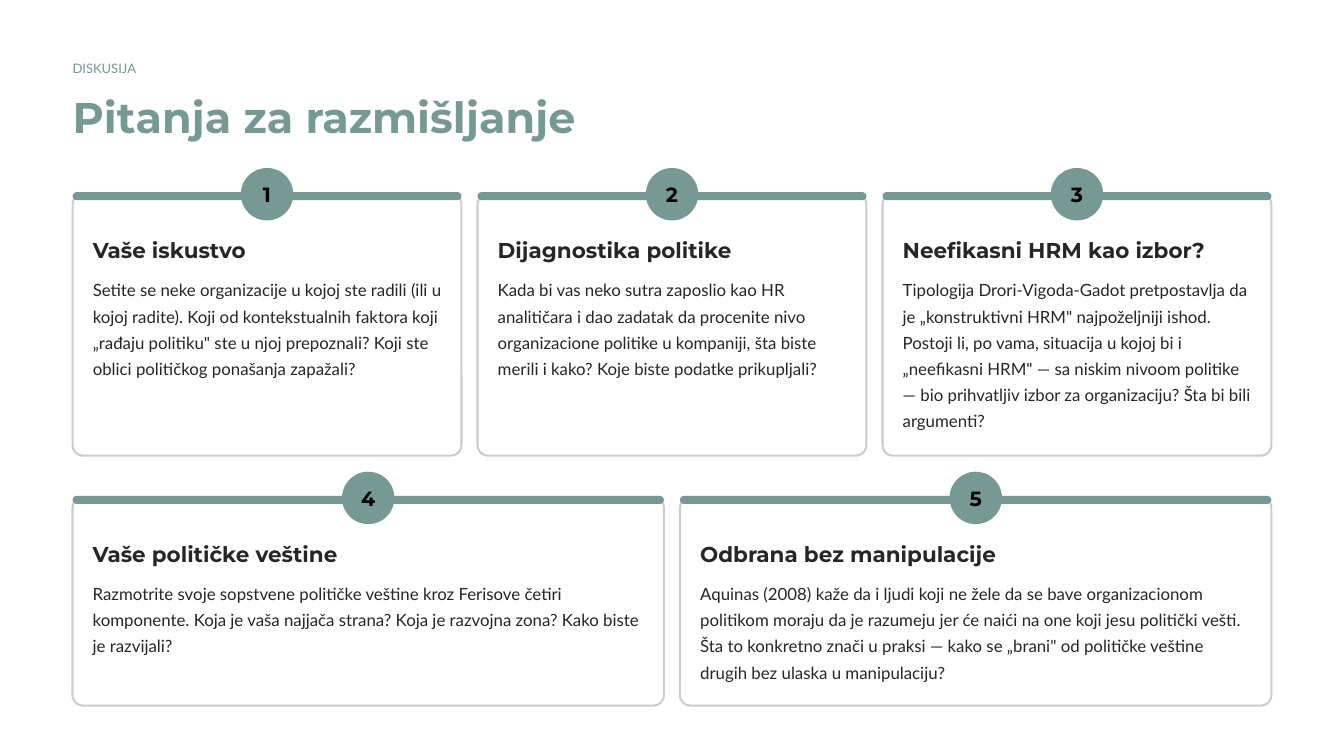
from dataclasses import dataclass

from pptx import Presentation
from pptx.dml.color import RGBColor
from pptx.enum.shapes import MSO_SHAPE
from pptx.enum.text import MSO_ANCHOR, PP_ALIGN
from pptx.util import Inches, Pt

GREEN, INK, BORDER, WHITE, BLACK = "769993", "272525", "C8CFCE", "FFFFFF", "000000"
SLIDE_WIDTH = 10
LEFT, CONTENT_WIDTH, GAP = 0.54, 8.92, 0.12
PADDING = 0.15
BAR_HEIGHT, BADGE_SIZE = 0.06, 0.39
NUMBER_WIDTH, NUMBER_HEIGHT = 0.15, 0.19
LINE_HEIGHT = 0.2

EYEBROW = {"name": "Lato", "size": Pt(7), "bold": False, "color": GREEN}
TITLE = {"name": "Montserrat", "size": Pt(23), "bold": True, "color": GREEN}
NUMBER = {"name": "Montserrat", "size": Pt(11), "bold": True, "color": BLACK}
HEADING = {"name": "Montserrat", "size": Pt(11.5), "bold": True, "color": INK}
BODY = {"name": "Lato", "size": Pt(9), "bold": False, "color": INK}


@dataclass
class Question:
    heading: str
    heading_width: float
    body: str
    line_count: int


@dataclass
class Row:
    top: float
    height: float
    corner: float
    questions: list


ROWS = [
    Row(1.44, 1.95, 0.04, [
        Question("Vaše iskustvo", 1.61,
                 "Setite se neke organizacije u kojoj ste radili (ili u kojoj radite). "
                 "Koji od kontekstualnih faktora koji „rađaju politiku\" ste u njoj "
                 "prepoznali? Koji ste oblici političkog ponašanja zapažali?", 4),
        Question("Dijagnostika politike", 1.75,
                 "Kada bi vas neko sutra zaposlio kao HR analitičara i dao zadatak da "
                 "procenite nivo organizacione politike u kompaniji, šta biste merili i "
                 "kako? Koje biste podatke prikupljali?", 4),
        Question("Neefikasni HRM kao izbor?", 2.26,
                 "Tipologija Drori-Vigoda-Gadot pretpostavlja da je „konstruktivni HRM\" "
                 "najpoželjniji ishod. Postoji li, po vama, situacija u kojoj bi i "
                 "„neefikasni HRM\" — sa niskim nivoom politike — bio prihvatljiv izbor "
                 "za organizaciju? Šta bi bili argumenti?", 6),
    ]),
    Row(3.7, 1.55, 0.05, [
        Question("Vaše političke veštine", 1.83,
                 "Razmotrite svoje sopstvene političke veštine kroz Ferisove četiri "
                 "komponente. Koja je vaša najjača strana? Koja je razvojna zona? "
                 "Kako biste je razvijali?", 3),
        Question("Odbrana bez manipulacije", 2.21,
                 "Aquinas (2008) kaže da i ljudi koji ne žele da se bave organizacionom "
                 "politikom moraju da je razumeju jer će naići na one koji jesu politički "
                 "vešti. Šta to konkretno znači u praksi — kako se „brani\" od političke "
                 "veštine drugih bez ulaska u manipulaciju?", 4),
    ]),
]


def rgb(color):
    return RGBColor.from_string(color)


def set_attributes(target, values):
    for name, value in values.items():
        setattr(target, name, value)


def add_rounded(slide, left, top, width, height, corner, fill, line=None):
    shape = slide.shapes.add_shape(
        MSO_SHAPE.ROUNDED_RECTANGLE,
        Inches(left), Inches(top), Inches(width), Inches(height))
    shape.adjustments[0] = corner
    shape.shadow.inherit = False
    shape.fill.solid()
    shape.fill.fore_color.rgb = rgb(fill)
    if line:
        shape.line.color.rgb = rgb(line)
        shape.line.width = Pt(1.13)
    else:
        shape.line.fill.background()


def add_text(slide, left, top, width, height, text, style, wrap=False, **paragraph_format):
    box = slide.shapes.add_textbox(Inches(left), Inches(top), Inches(width), Inches(height))
    frame = box.text_frame
    set_attributes(frame, {"word_wrap": wrap, "margin_left": 0, "margin_top": 0,
                           "margin_right": 0, "margin_bottom": 0})
    paragraph = frame.paragraphs[0]
    set_attributes(paragraph, paragraph_format)
    run = paragraph.add_run()
    run.text = text
    set_attributes(run.font, {key: value for key, value in style.items() if key != "color"})
    run.font.color.rgb = rgb(style["color"])
    return frame


def add_badge(slide, center, card_top, number):
    add_rounded(slide, center - BADGE_SIZE / 2, card_top - 0.19,
                BADGE_SIZE, BADGE_SIZE, 0.5, GREEN)
    frame = add_text(slide, center - NUMBER_WIDTH / 2, card_top - 0.09, NUMBER_WIDTH,
                     NUMBER_HEIGHT, str(number), NUMBER, alignment=PP_ALIGN.CENTER)
    frame.vertical_anchor = MSO_ANCHOR.MIDDLE


def add_card(slide, left, width, row, question, number):
    add_rounded(slide, left, row.top, width, row.height, row.corner, WHITE, BORDER)
    add_rounded(slide, left, row.top - 0.01, width, BAR_HEIGHT, 0.5, GREEN)
    add_badge(slide, left + width / 2, row.top, number)
    text_left = left + PADDING
    add_text(slide, text_left, row.top + 0.32, question.heading_width, 0.2,
             question.heading, HEADING, line_spacing=Pt(14))
    add_text(slide, text_left, row.top + 0.6, width - 2 * PADDING,
             question.line_count * LINE_HEIGHT, question.body, BODY,
             wrap=True, line_spacing=Pt(14))


def main():
    presentation = Presentation()
    presentation.slide_width = Inches(SLIDE_WIDTH)
    presentation.slide_height = Inches(SLIDE_WIDTH * 9 / 16)
    slide = presentation.slides.add_slide(presentation.slide_layouts[6])
    slide.background.fill.solid()
    slide.background.fill.fore_color.rgb = rgb(WHITE)

    add_text(slide, LEFT, 0.41, 0.5, 0.16, "DISKUSIJA", EYEBROW, line_spacing=Pt(11.5))
    add_text(slide, LEFT, 0.66, 3.77, 0.4, "Pitanja za razmišljanje", TITLE,
             line_spacing=Pt(28.5))

    number = 1
    for row in ROWS:
        columns = len(row.questions)
        width = (CONTENT_WIDTH - GAP * (columns - 1)) / columns
        for column, question in enumerate(row.questions):
            add_card(slide, LEFT + column * (width + GAP), width, row, question, number)
            number += 1

    presentation.save("out.pptx")


if __name__ == "__main__":
    main()
